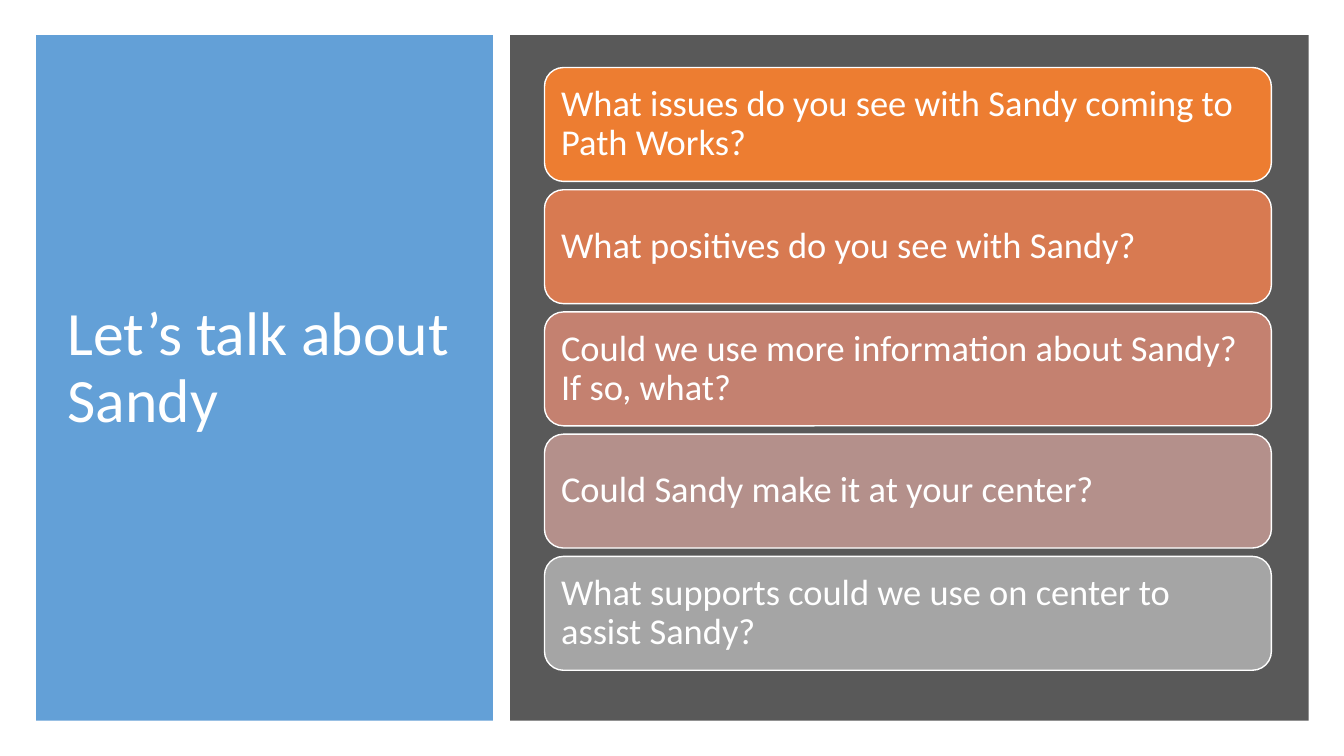
from lxml import etree
from pptx import Presentation
from pptx.dml.color import RGBColor
from pptx.enum.shapes import MSO_SHAPE
from pptx.enum.text import MSO_ANCHOR, MSO_AUTO_SIZE, PP_ALIGN
from pptx.oxml.ns import qn
from pptx.util import Inches, Pt

RECTANGLE, ROUNDED = MSO_SHAPE.RECTANGLE, MSO_SHAPE.ROUNDED_RECTANGLE
MIDDLE, LEFT, NO_FIT = MSO_ANCHOR.MIDDLE, PP_ALIGN.LEFT, MSO_AUTO_SIZE.NONE

THEME = {
    "font": "Calibri", "title_size": 44, "card_size": 26,
    "text": "FFFFFF", "title_panel": "5B9BD5", "card_panel": "595959",
    "cards": ["ED7D31", "D87A51", "C48170", "B4908B", "A5A5A5"],
}
QUESTIONS = [
    "What issues do you see with Sandy coming to Path Works?",
    "What positives do you see with Sandy?",
    "Could we use more information about Sandy? If so, what?",
    "Could Sandy make it at your center?",
    "What supports could we use on center to assist Sandy?",
]
PANEL_TOP, PANEL_HEIGHT = 0.35, 6.8
CARD_LEFT, CARD_WIDTH, CARD_HEIGHT = 5.4, 7.21, 1.13
FIRST_TOP, LAST_TOP = 0.67, 5.52
CARD_PITCH = (LAST_TOP - FIRST_TOP) / (len(QUESTIONS) - 1)
INSET = Inches(0.11)


def add_block(page, kind, left, top, width, height, color):
    block = page.shapes.add_shape(kind, *map(Inches, (left, top, width, height)))
    block.shadow.inherit = False
    block.fill.solid()
    block.fill.fore_color.rgb = RGBColor.from_string(color)
    block.line.fill.background()
    return block


def write_text(box, text, size, frame_format):
    frame = box.text_frame
    frame.text = text
    for name, value in frame_format.items():
        setattr(frame, name, value)
    para = frame.paragraphs[0]
    para.alignment, para.line_spacing = LEFT, 0.9
    font = para.runs[0].font
    font.name, font.size = THEME["font"], Pt(size)
    font.color.rgb = RGBColor.from_string(THEME["text"])


deck = Presentation()
deck.slide_width, deck.slide_height = Inches(13.33), Inches(7.5)
page = deck.slides.add_slide(deck.slide_layouts[5])
frame_format = {"word_wrap": True, "auto_size": NO_FIT, "vertical_anchor": MIDDLE}

# Two panels, the left one slightly transparent
title_panel = add_block(page, RECTANGLE, 0.36, PANEL_TOP, 4.53, PANEL_HEIGHT,
                        THEME["title_panel"])
panel_color = title_panel.element.spPr.find(qn("a:solidFill"))[0]
etree.SubElement(panel_color, qn("a:alpha"), val="95000")
add_block(page, RECTANGLE, 5.06, PANEL_TOP, 7.92, PANEL_HEIGHT, THEME["card_panel"])

# Title, in front of its panel
title = page.shapes.title
title.left, title.top, title.width, title.height = map(Inches, (0.57, 0.64, 4.07, 6.04))
write_text(title, "Let’s talk about Sandy", THEME["title_size"], frame_format)
title_panel.element.addnext(title.element)

# Question cards
card_format = {**frame_format, "margin_left": INSET, "margin_right": INSET,
               "margin_top": INSET, "margin_bottom": INSET}
for row, (question, color) in enumerate(zip(QUESTIONS, THEME["cards"])):
    card = add_block(page, ROUNDED, CARD_LEFT, FIRST_TOP + row * CARD_PITCH,
                     CARD_WIDTH, CARD_HEIGHT, color)
    card.line.color.rgb = RGBColor.from_string(THEME["text"])
    card.line.width = Pt(1)
    write_text(card, question, THEME["card_size"], card_format)

deck.save("out.pptx")
